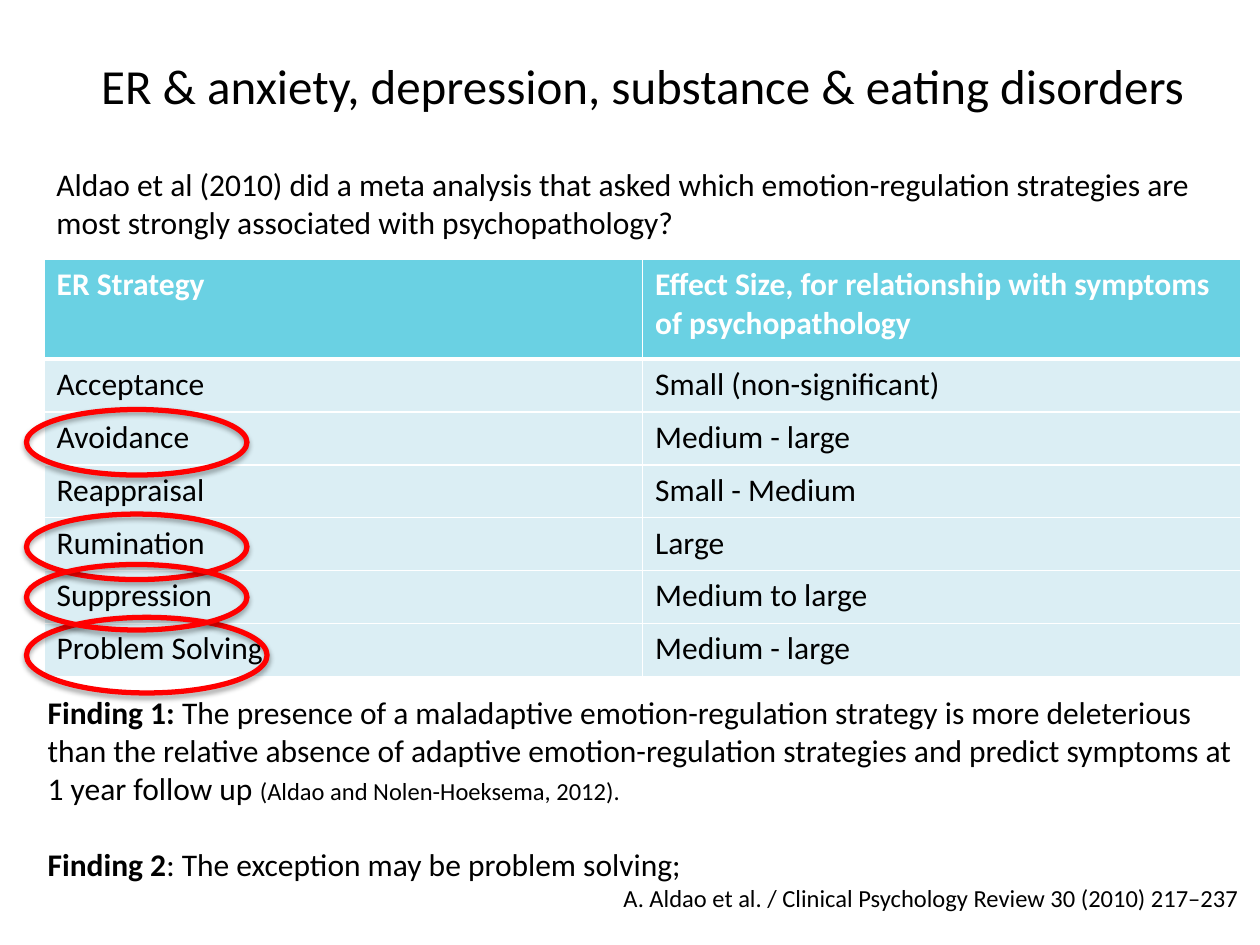
from dataclasses import dataclass

from lxml.etree import SubElement
from pptx import Presentation
from pptx.dml.color import RGBColor as Color
from pptx.enum.shapes import MSO_SHAPE as Shape
from pptx.enum.text import MSO_ANCHOR as Anchor, PP_ALIGN as Align
from pptx.oxml import parse_xml
from pptx.oxml.ns import nsdecls, qn
from pptx.util import Inches, Pt


@dataclass(frozen=True)
class Theme:
    font: str = "Calibri"
    title: int = 28
    body: int = 18
    small: int = 14
    text: str = "000000"
    light: str = "FFFFFF"
    header: str = "6AD1E3"
    row: str = "DBEEF4"
    ring: str = "FF0000"


THEME = Theme()

# Shared grid, in inches
LEFT, WIDTH = 0.35, 9.5
TABLE_TOP, HEADER_HEIGHT, ROW_HEIGHT = 2.06, 0.79, 0.42
RING_LEFT, RING_WIDTH, RING_HEIGHT = 0.21, 1.75, 0.52

STRATEGIES = [
    ("ER Strategy", "Effect Size, for relationship with symptoms of psychopathology"),
    ("Acceptance", "Small (non-significant)"),
    ("Avoidance", "Medium - large"),
    ("Reappraisal", "Small - Medium"),
    ("Rumination", "Large"),
    ("Suppression", "Medium to large"),
    ("Problem Solving", "Medium - large"),
]


def style_font(font, size, color=THEME.text, bold=None):
    font.name, font.size, font.bold = THEME.font, Pt(size), bold
    font.color.rgb = Color.from_string(color)


def add_text(slide, box, paragraphs, size=THEME.body, align=Align.LEFT, anchor=Anchor.TOP):
    """Each paragraph is a list of (text, bold, size) runs; None inherits."""
    frame = slide.shapes.add_textbox(*map(Inches, box)).text_frame
    frame.word_wrap = True
    frame.vertical_anchor = anchor
    for index, runs in enumerate(paragraphs):
        paragraph = frame.add_paragraph() if index else frame.paragraphs[0]
        paragraph.alignment = align
        style_font(paragraph.font, size)
        for text, bold, run_size in runs:
            run = paragraph.add_run()
            run.text = text
            style_font(run.font, run_size or size, bold=bold)
    return frame


def add_borders(cell, row):
    """White rules, with a heavier one under the header."""
    properties = cell._tc.get_or_add_tcPr()
    heavy = {(0, "lnB"), (1, "lnT")}
    for side in ("lnL", "lnR", "lnT", "lnB"):
        width = Pt(3 if (row, side) in heavy else 1)
        line = SubElement(properties, qn(f"a:{side}"), w=str(width))
        fill = SubElement(line, qn("a:solidFill"))
        SubElement(fill, qn("a:srgbClr"), val=THEME.light)


def add_strategy_table(slide):
    height = HEADER_HEIGHT + ROW_HEIGHT * (len(STRATEGIES) - 1)
    table = slide.shapes.add_table(
        len(STRATEGIES), 2, *map(Inches, (LEFT, TABLE_TOP, WIDTH, height))).table
    for row, texts in enumerate(STRATEGIES):
        header = row == 0
        table.rows[row].height = Inches(HEADER_HEIGHT if header else ROW_HEIGHT)
        for column, text in enumerate(texts):
            cell = table.cell(row, column)
            cell.text = text
            style_font(cell.text_frame.paragraphs[0].font, THEME.body,
                       THEME.light if header else THEME.text, header)
            add_borders(cell, row)
            cell.fill.solid()
            cell.fill.fore_color.rgb = Color.from_string(THEME.header if header else THEME.row)


def add_ring(slide, top, width=RING_WIDTH, height=RING_HEIGHT):
    """Red outline with a soft shadow below it."""
    ring = slide.shapes.add_shape(Shape.OVAL, *map(Inches, (RING_LEFT, top, width, height)))
    ring.fill.background()
    ring.line.color.rgb = Color.from_string(THEME.ring)
    ring.line.width = Pt(3)
    ring._element.spPr.append(parse_xml(
        f'<a:effectLst {nsdecls("a")}>'
        f'<a:outerShdw blurRad="{Pt(3.1)}" dist="{Pt(1.8)}" dir="5400000" rotWithShape="0">'
        f'<a:srgbClr val="{THEME.text}"><a:alpha val="35000"/></a:srgbClr>'
        '</a:outerShdw></a:effectLst>'))


def main():
    presentation = Presentation()
    presentation.slide_width, presentation.slide_height = Inches(10), Inches(7.5)
    slide = presentation.slides.add_slide(presentation.slide_layouts[6])

    # Title
    add_text(slide, (LEFT, 0.05, WIDTH, 1.25),
             [[("ER & anxiety, depression, substance & eating disorders", None, None)]],
             THEME.title, Align.CENTER, Anchor.MIDDLE)

    # Strategies and their effect sizes
    add_strategy_table(slide)

    # Findings and source
    findings = add_text(slide, (0.28, 5.45, 9.65, 1.85), [
        [("Finding 1:", True, None),
         (" The presence of a maladaptive emotion-regulation strategy is more deleterious "
          "than the relative absence of adaptive emotion-regulation strategies and predict "
          "symptoms at 1 year follow up ", None, None),
         ("(Aldao and Nolen-Hoeksema, 2012).", None, THEME.small)],
        [("Finding 2", True, None),
         (": The exception may be problem solving;", None, None)],
        [("A. Aldao et al. / Clinical Psychology Review 30 (2010) 217–237", None, THEME.small)],
    ])
    findings.paragraphs[1].space_before = Pt(22)
    findings.paragraphs[2].alignment = Align.RIGHT

    # Introduction
    add_text(slide, (LEFT, 1.26, WIDTH, 1.01),
             [[("Aldao et al (2010) did a meta analysis that asked which emotion-regulation "
                "strategies are most strongly associated with psychopathology?", None, None)]])

    # Rings around avoidance, rumination, problem solving and suppression
    add_ring(slide, 3.25)
    add_ring(slide, 4.08)
    add_ring(slide, 4.9, width=1.91, height=0.6)
    add_ring(slide, 4.48)

    presentation.save("out.pptx")


if __name__ == "__main__":
    main()
